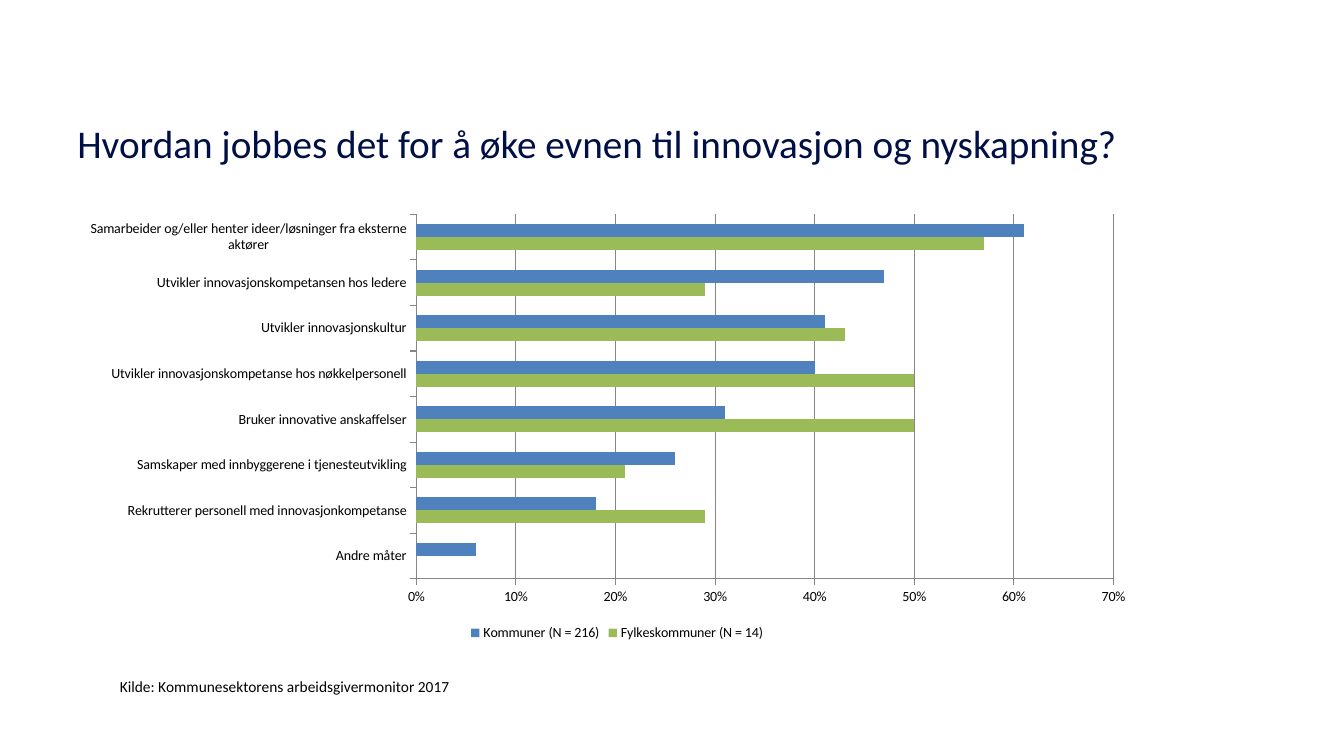
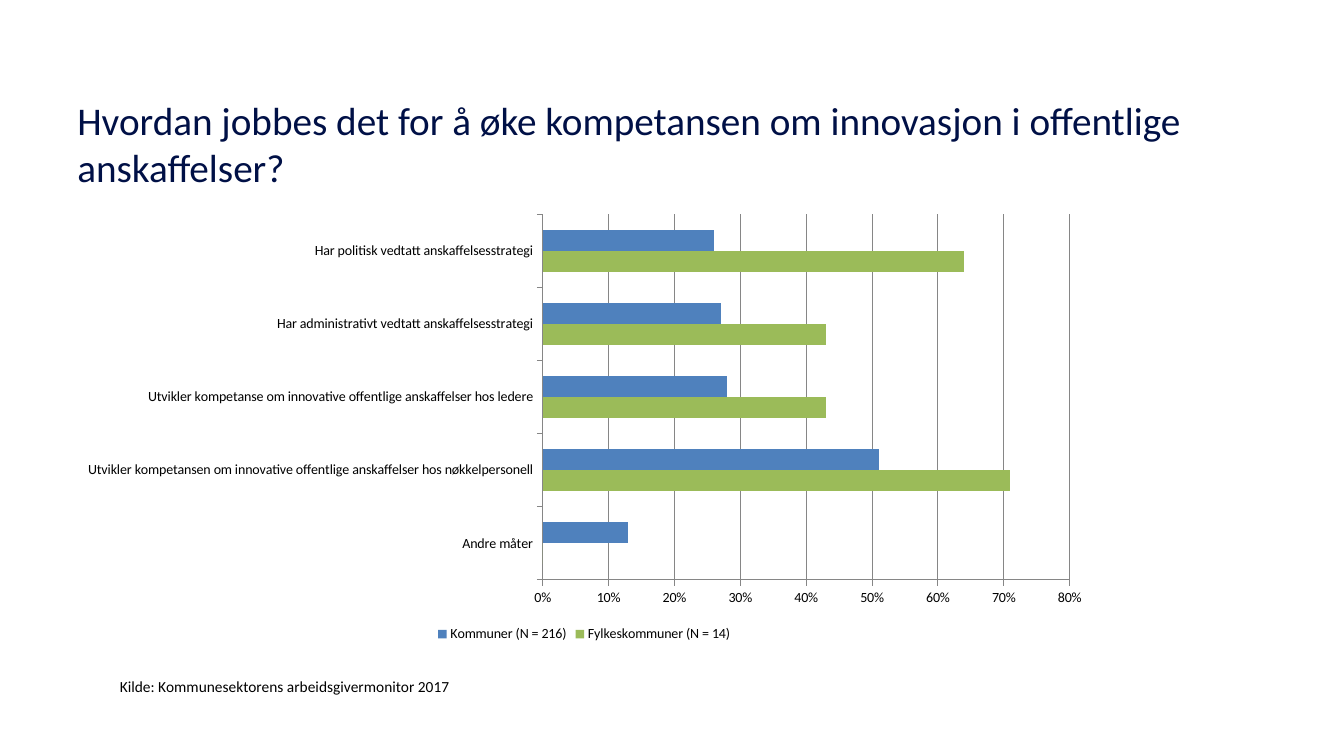
from lxml import etree
from pptx import Presentation
from pptx import util as u
from pptx.chart import data as chart_data
from pptx.dml.color import RGBColor
from pptx.enum import chart as charts, text as texts
from pptx.oxml import ns

# Content: categories and values run from the bottom of the chart to the top
SOURCE = "Kilde: Kommunesektorens arbeidsgivermonitor 2017"
SERIES = [("Fylkeskommuner (N = 14)", "green"), ("Kommuner (N = 216)", "blue")]
SLIDES = [
    {
        "title": "Hvordan jobbes det for å øke evnen til innovasjon og nyskapning?",
        "rows": [
            ("Andre måter", 0, 0.06),
            ("Rekrutterer personell med innovasjonkompetanse", 0.29, 0.18),
            ("Samskaper med innbyggerene i tjenesteutvikling", 0.21, 0.26),
            ("Bruker innovative anskaffelser", 0.5, 0.31),
            ("Utvikler innovasjonskompetanse hos nøkkelpersonell", 0.5, 0.4),
            ("Utvikler innovasjonskultur", 0.43, 0.41),
            ("Utvikler innovasjonskompetansen hos ledere", 0.29, 0.47),
            ("Samarbeider og/eller henter ideer/løsninger fra eksterne aktører", 0.57, 0.61),
        ],
        "area": (2.24, 5.18, 26.62, 11.07),
        "plot": {"x": 0.31, "y": 0.02, "w": 0.66, "h": 0.83},
        "maximum": 0.7,
    },
    {
        "title": "Hvordan jobbes det for å øke kompetansen om innovasjon i offentlige anskaffelser?",
        "rows": [
            ("Andre måter", 0, 0.13),
            ("Utvikler kompetansen om innovative offentlige anskaffelser hos nøkkelpersonell", 0.71, 0.51),
            ("Utvikler kompetanse om innovative offentlige anskaffelser hos ledere", 0.43, 0.28),
            ("Har administrativt vedtatt anskaffelsesstrategi", 0.43, 0.27),
            ("Har politisk vedtatt anskaffelsesstrategi", 0.64, 0.26),
        ],
        "area": (1.7, 5.18, 26.04, 11.1),
        "plot": {"x": 0.46, "y": 0.02, "w": 0.51, "h": 0.83},
        "maximum": 0.8,
    },
]

# Shared style
FONT = "Calibri"
COLORS = {"title": "001046", "text": "000000", "grid": "868686",
          "green": "9BBB59", "blue": "4F81BD"}
TITLE_AREA = (1.7, 2.03, 30.48, 3.15)
SOURCE_AREA = (2.77, 16.94, 10.11, 0.74)


def color(name):
    return RGBColor.from_string(COLORS[name])


def style_font(font, size, name):
    font.name, font.size = FONT, u.Pt(size)
    font.color.rgb = color(name)


def add_text(page, text, area, size, name="text", anchor=texts.MSO_ANCHOR.TOP):
    box = page.shapes.add_textbox(*map(u.Cm, area))
    frame = box.text_frame
    frame.word_wrap = True
    frame.vertical_anchor = anchor
    span = frame.paragraphs[0].add_run()
    span.text = text
    style_font(span.font, size, name)


def set_plot_layout(chart, plot):
    """Fix the inner plot area, in fractions of the chart."""
    plot_area = chart.element.find(".//" + ns.qn("c:plotArea"))
    for old in plot_area.findall(ns.qn("c:layout")):
        plot_area.remove(old)
    layout = etree.Element(ns.qn("c:layout"))
    manual = etree.SubElement(layout, ns.qn("c:manualLayout"))
    settings = {"layoutTarget": "inner", "xMode": "edge", "yMode": "edge", **plot}
    for tag, value in settings.items():
        etree.SubElement(manual, ns.qn("c:" + tag)).set("val", str(value))
    plot_area.insert(0, layout)


def add_bar_chart(page, rows, area, plot, maximum):
    labels, *columns = zip(*rows)
    data = chart_data.CategoryChartData(number_format="0%")
    data.categories = labels
    for (name, _), values in zip(SERIES, columns):
        data.add_series(name, values)
    chart = page.shapes.add_chart(
        charts.XL_CHART_TYPE.BAR_CLUSTERED, *map(u.Cm, area), data).chart
    style_font(chart.font, 10, "text")
    chart.has_title = False
    chart.has_legend = True
    chart.legend.position = charts.XL_LEGEND_POSITION.BOTTOM
    chart.legend.include_in_layout = False

    # Bars
    bars = chart.plots[0]
    bars.gap_width, bars.overlap = 150, 0
    bars.vary_by_categories = False
    for series, (_, fill) in zip(bars.series, SERIES):
        series.format.fill.solid()
        series.format.fill.fore_color.rgb = color(fill)

    # Axes and gridlines
    value_axis, category_axis = chart.value_axis, chart.category_axis
    value_axis.minimum_scale, value_axis.maximum_scale = 0, maximum
    value_axis.major_unit = 0.1
    value_axis.tick_labels.number_format = "0%"
    value_axis.tick_labels.number_format_is_linked = False
    value_axis.has_major_gridlines = True
    category_axis.has_major_gridlines = False
    for axis in (value_axis, category_axis):
        axis.major_tick_mark = charts.XL_TICK_MARK.OUTSIDE
        axis.minor_tick_mark = charts.XL_TICK_MARK.NONE
    for part in (value_axis, category_axis, value_axis.major_gridlines):
        part.format.line.color.rgb = color("grid")
        part.format.line.width = u.Pt(0.75)
    set_plot_layout(chart, plot)


def main():
    deck = Presentation()
    deck.slide_width, deck.slide_height = u.Cm(33.87), u.Cm(19.05)
    for content in SLIDES:
        page = deck.slides.add_slide(deck.slide_layouts[6])
        add_text(page, content["title"], TITLE_AREA, 28, name="title",
                 anchor=texts.MSO_ANCHOR.MIDDLE)
        add_bar_chart(page, content["rows"], content["area"],
                      content["plot"], content["maximum"])
        add_text(page, SOURCE, SOURCE_AREA, 11)
    deck.save("out.pptx")


if __name__ == "__main__":
    main()
